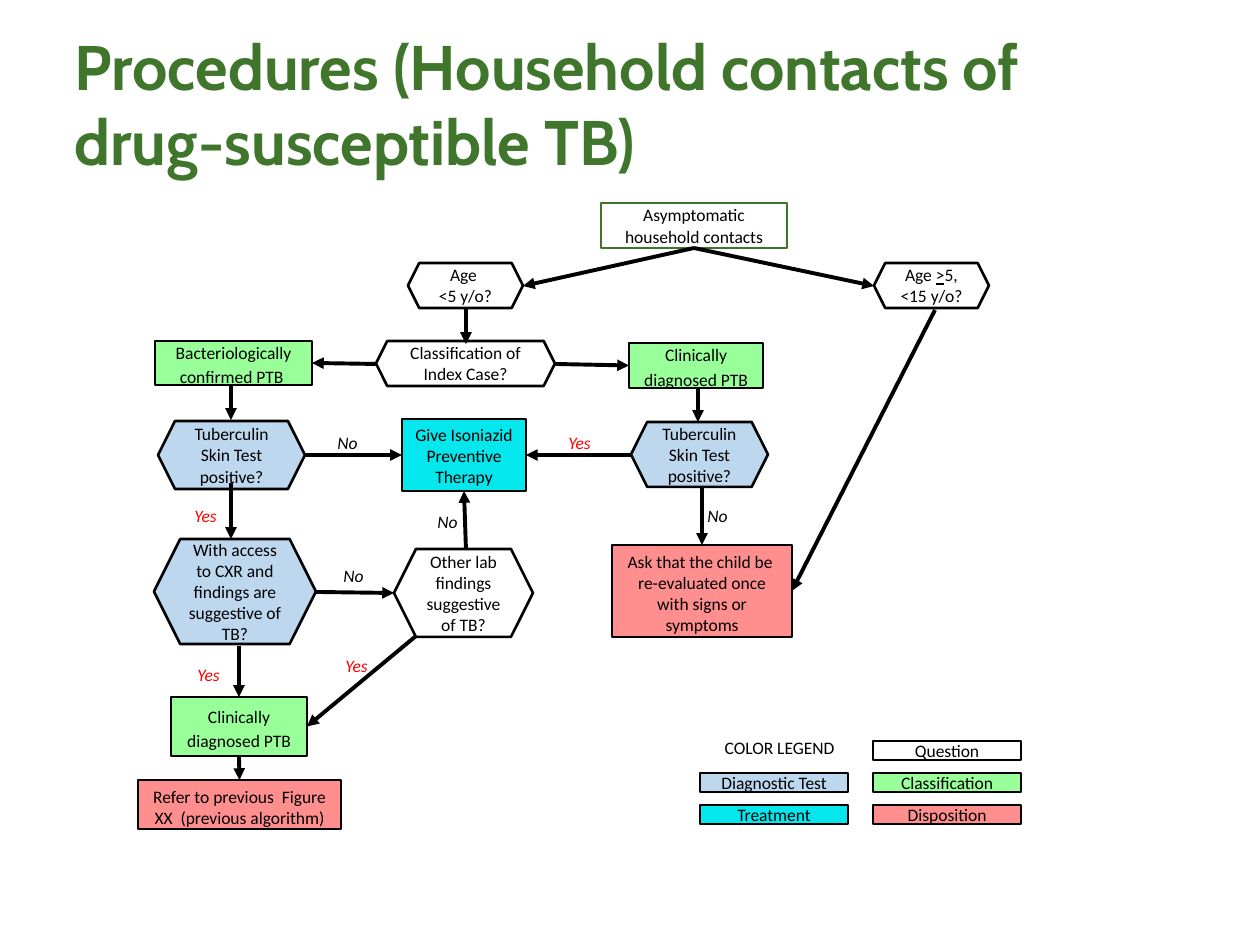
from lxml import etree
from pptx import Presentation
from pptx.dml.color import RGBColor
from pptx.enum.shapes import MSO_CONNECTOR, MSO_SHAPE
from pptx.enum.text import MSO_ANCHOR as Anchor, PP_ALIGN as Align
from pptx.oxml.ns import qn
from pptx.util import Inches, Pt

PX = Inches(1) / 126
BLACK = RGBColor(0x00, 0x00, 0x00)
WHITE = RGBColor(0xFF, 0xFF, 0xFF)
RED = RGBColor(0xFF, 0x00, 0x00)
TITLE_GREEN = RGBColor(0x3F, 0x76, 0x2B)
START_GREEN = RGBColor(0x3E, 0x75, 0x2A)
CLASSIFICATION = RGBColor(0x99, 0xFF, 0x99)
DIAGNOSTIC = RGBColor(0xBD, 0xD7, 0xEE)
TREATMENT = RGBColor(0x03, 0xE7, 0xED)
DISPOSITION = RGBColor(0xFF, 0x8F, 0x8F)
RECT, HEXAGON = MSO_SHAPE.RECTANGLE, MSO_SHAPE.HEXAGON
TOP, LEFT, BOTTOM, RIGHT = range(4)


def px(*lengths):
    return [round(length * PX) for length in lengths]


def write_text(shape, text, size=10, font="Calibri", color=BLACK, bold=False, italic=False,
               align=Align.CENTER, anchor=Anchor.MIDDLE, spacing=None, after=0):
    """Fill a shape with one paragraph per line; _marks_ underline what they enclose."""
    frame = shape.text_frame
    frame.word_wrap = True
    frame.vertical_anchor = anchor
    for number, line in enumerate(text.split("\n")):
        paragraph = frame.add_paragraph() if number else frame.paragraphs[0]
        paragraph.alignment = align
        paragraph.line_spacing = spacing
        paragraph.space_after = Pt(after)
        for part, words in enumerate(line.split("_")):
            run = paragraph.add_run()
            run.text = words
            run.font.size = Pt(size)
            run.font.name = font
            run.font.color.rgb = color
            run.font.bold = bold
            run.font.italic = italic
            run.font.underline = part % 2 == 1


deck = Presentation()
deck.slide_width, deck.slide_height = Inches(10), Inches(7.5)
slide = deck.slides.add_slide(deck.slide_layouts[6])
shapes = slide.shapes

title = shapes.add_textbox(*px(62, 21, 1092, 163))
write_text(title, "Procedures (Household contacts of drug-susceptible TB)", size=36, font="Cabin",
           color=TITLE_GREEN, bold=True, align=Align.LEFT, anchor=Anchor.TOP)

# Flowchart steps and colour legend: key, outline, place, fill, text, text format
classified = {"spacing": 1.15, "after": 10}
disposed = {"anchor": Anchor.TOP, "after": 10}
steps = [
    ("contacts", RECT, (601, 203, 186, 45), WHITE, "Asymptomatic household contacts", {}),
    ("under 5", HEXAGON, (408, 263, 115, 45), WHITE, "Age \n<5 y/o?", {}),
    ("5 to 15", HEXAGON, (874, 263, 115, 45), WHITE, "Age _>_5,\n<15 y/o?", {}),
    ("index case", HEXAGON, (376, 341, 179, 45), WHITE, "Classification of Index Case?", {}),
    ("confirmed", RECT, (155, 341, 157, 44), CLASSIFICATION,
     "Bacteriologically confirmed PTB ", classified),
    ("diagnosed", RECT, (629, 343, 134, 45), CLASSIFICATION,
     "Clinically diagnosed PTB", classified),
    ("left skin test", HEXAGON, (158, 421, 147, 68), DIAGNOSTIC,
     "Tuberculin Skin Test positive?", {}),
    ("right skin test", HEXAGON, (631, 422, 137, 65), DIAGNOSTIC,
     "Tuberculin Skin Test positive?", {}),
    ("isoniazid", RECT, (402, 419, 124, 72), TREATMENT, "Give Isoniazid Preventive Therapy", {}),
    ("x-ray", HEXAGON, (154, 539, 162, 105), DIAGNOSTIC,
     "With access to CXR and findings are suggestive of TB?", {}),
    ("other lab", HEXAGON, (394, 549, 139, 88), WHITE,
     "Other lab findings suggestive of TB?", {}),
    ("re-evaluate", RECT, (612, 545, 180, 92), DISPOSITION,
     "Ask that the child be  re-evaluated once with signs or symptoms", disposed),
    ("late diagnosis", RECT, (171, 697, 136, 59), CLASSIFICATION,
     "Clinically diagnosed PTB", classified),
    ("refer", RECT, (138, 780, 203, 49), DISPOSITION,
     "Refer to previous  Figure XX  (previous algorithm)", disposed),
]
legend = [
    (873, 741, WHITE, "Question"),
    (700, 773, DIAGNOSTIC, "Diagnostic Test"),
    (873, 773, CLASSIFICATION, "Classification"),
    (700, 805, TREATMENT, "Treatment"),
    (873, 805, DISPOSITION, "Disposition"),
]
steps += [(text, RECT, (x, y, 148, 19), fill, text, {}) for x, y, fill, text in legend]

boxes = {}
for key, outline, place, fill, text, text_format in steps:
    box = boxes[key] = shapes.add_shape(outline, *px(*place))
    box.shadow.inherit = False
    box.fill.solid()
    box.fill.fore_color.rgb = fill
    box.line.color.rgb = BLACK
    box.line.width = Pt(1.5 if outline == HEXAGON else 1)
    write_text(box, text, **text_format)
boxes["contacts"].line.color.rgb = START_GREEN
boxes["contacts"].line.width = Pt(1.5)

legend_heading = shapes.add_textbox(*px(673, 731, 213, 34))
write_text(legend_heading, "COLOR LEGEND", anchor=Anchor.TOP)

# An arrow end is either a point or a rectangle's key with its side
arrows = [
    (("contacts", BOTTOM), (523, 286)),
    (("contacts", BOTTOM), (874, 286)),
    ((466, 309), (466, 344)),
    ((376, 364), ("confirmed", RIGHT)),
    ((555, 364), ("diagnosed", LEFT)),
    ((231, 386), (231, 420)),
    ((698, 387), (698, 422)),
    ((305, 455), ("isoniazid", LEFT)),
    ((631, 455), ("isoniazid", RIGHT)),
    ((466, 549), ("isoniazid", BOTTOM)),
    ((231, 483), (231, 539)),
    ((316, 592), (394, 593)),
    ((702, 486), ("re-evaluate", TOP)),
    ((935, 310), ("re-evaluate", RIGHT)),
    ((239, 646), ("late diagnosis", TOP)),
    ((416, 636), ("late diagnosis", RIGHT)),
    (("late diagnosis", BOTTOM), ("refer", TOP)),
]
for ends in arrows:
    points = [(0, 0) if end[0] in boxes else end for end in ends]
    arrow = shapes.add_connector(MSO_CONNECTOR.STRAIGHT, *px(*points[0], *points[1]))
    for end, connect in zip(ends, (arrow.begin_connect, arrow.end_connect)):
        if end[0] in boxes:
            connect(boxes[end[0]], end[1])
    arrow.line.color.rgb = BLACK
    arrow.line.width = Pt(2.25)
    etree.SubElement(arrow.line._get_or_add_ln(), qn("a:tailEnd"), type="triangle")
    etree.SubElement(arrow._element.spPr, qn("a:effectLst"))

answers = {
    ("No", BLACK): [(320, 426), (690, 499), (420, 505), (326, 559)],
    ("Yes", RED): [(552, 426), (178, 499), (329, 649), (181, 658)],
}
for (answer, color), places in answers.items():
    for x, y in places:
        label = shapes.add_textbox(*px(x, y, 55, 34))
        write_text(label, answer, color=color, italic=True, anchor=Anchor.TOP)

deck.save("out.pptx")
